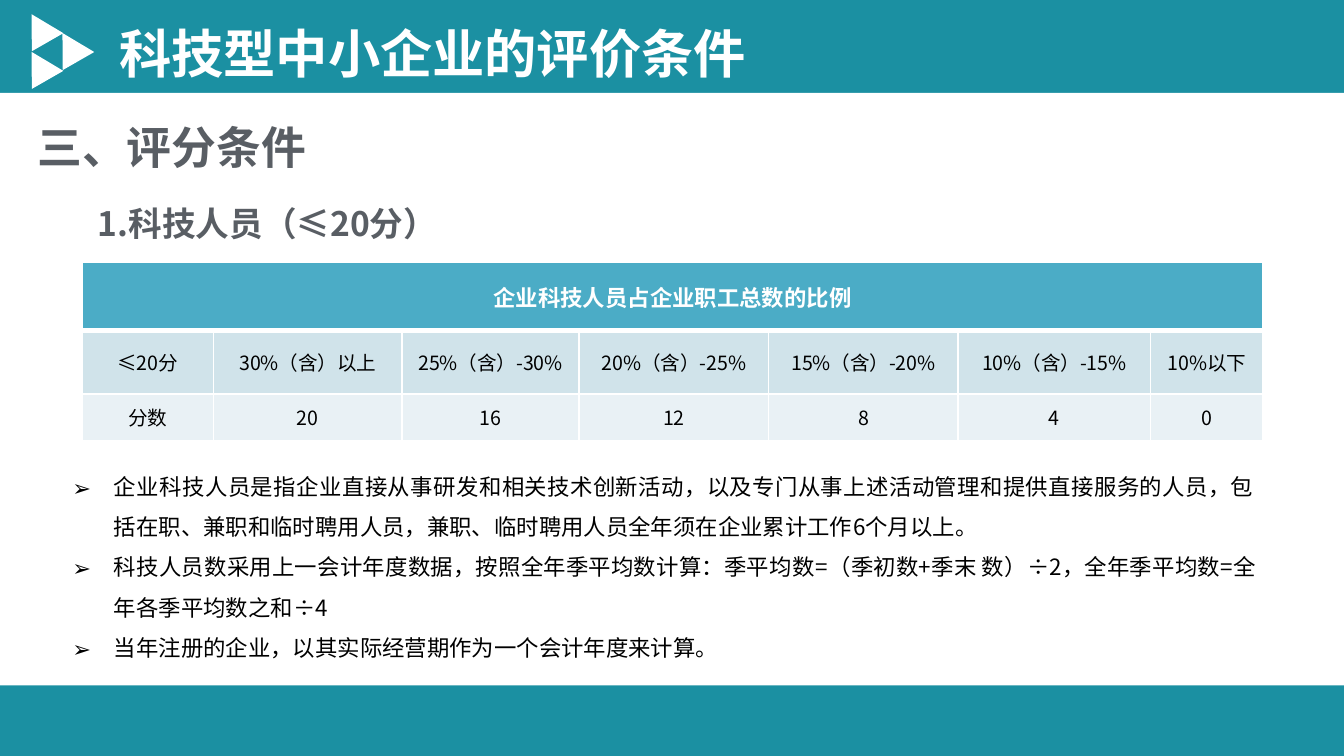
from lxml import etree
from pptx import Presentation
from pptx.dml.color import RGBColor
from pptx.enum import shapes, text
from pptx.oxml import ns
from pptx.util import Inches, Pt

THEME = {
    "font": "Noto Sans CJK SC",
    "teal": "1B90A2", "white": "FFFFFF", "gray": "595E64", "black": "000000",
    "head": "4BACC6", "band": "D0E3EA", "pale": "E9F1F5",
    "title": 28, "part": 24, "topic": 18, "body": 12, "cell": 10.5,
}

LABELS = [
    ("科技型中小企业的评价条件", (0.79, 0.11, 4.91, 0.57), "title", "white", False),
    ("三、评分条件", (0.18, 0.84, 2.22, 0.5), "part", "gray", False),
    ("1.科技人员（≤20分）", (0.63, 1.46, 8.62, 0.4), "topic", "gray", True),
]
HEAD = "企业科技人员占企业职工总数的比例"
SCORES = [
    ("≤20分", "分数", 0.98),
    ("30%（含）以上", "20", 1.4),
    ("25%（含）-30%", "16", 1.32),
    ("20%（含）-25%", "12", 1.41),
    ("15%（含）-20%", "8", 1.41),
    ("10%（含）-15%", "4", 1.43),
    ("10%以下", "0", 0.84),
]
ROWS = [0.51, 0.47, 0.35]
NOTES = [
    "企业科技人员是指企业直接从事研发和相关技术创新活动，以及专门从事上述活动管理和提供直接服务的人员，包括在职、兼职和临时聘用人员，兼职、临时聘用人员全年须在企业累计工作6个月以上。",
    "科技人员数采用上一会计年度数据，按照全年季平均数计算：季平均数=（季初数+季末 数）÷2，全年季平均数=全年各季平均数之和÷4",
    "当年注册的企业，以其实际经营期作为一个会计年度来计算。",
]
ARROWS = [(0.16, 0.09), (0.16, 0.37), (0.39, 0.23)]


def color(name):
    return RGBColor.from_string(THEME[name])


def style(para, words, size, tone, bold=False):
    para.text = words
    font = para.font
    font.name, font.size, font.bold = THEME["font"], Pt(THEME[size]), bold
    font.color.rgb = color(tone)
    props = para._p.get_or_add_pPr().find(ns.qn("a:defRPr"))
    etree.SubElement(props, ns.qn("a:ea"), typeface=THEME["font"])
    return props


def add_shape(slide, kind, box, angle=0):
    shape = slide.shapes.add_shape(kind, *map(Inches, box))
    shape.shadow.inherit = False
    shape.fill.solid()
    shape.fill.fore_color.rgb = color("white")
    shape.line.fill.background()
    shape.rotation = angle


def add_text(slide, box, wrap):
    frame = slide.shapes.add_textbox(*map(Inches, box)).text_frame
    frame.word_wrap = wrap
    frame.auto_size = text.MSO_AUTO_SIZE.SHAPE_TO_FIT_TEXT
    return frame


def add_edge(cell, side, width):
    line = etree.SubElement(cell._tc.get_or_add_tcPr(), ns.qn("a:ln" + side), w=str(Pt(width)))
    fill = etree.SubElement(line, ns.qn("a:solidFill"))
    etree.SubElement(fill, ns.qn("a:srgbClr"), val=THEME["white"])


def add_scores(slide):
    labels, points, widths = zip(*SCORES)
    grid = [(HEAD,) + ("",) * (len(SCORES) - 1), labels, points]
    table = slide.shapes.add_table(
        len(ROWS), len(SCORES), Inches(0.61), Inches(1.95),
        Inches(sum(widths)), Inches(sum(ROWS))).table
    table.first_row = table.horz_banding = False
    for col, width in zip(table.columns, widths):
        col.width = Inches(width)
    for r, (row, high) in enumerate(zip(grid, ROWS)):
        table.rows[r].height = Inches(high)
        for c, words in enumerate(row):
            cell = table.cell(r, c)
            for side in "LRTB":
                thick = (r, side) in [(0, "B"), (1, "T")]
                add_edge(cell, side, 3 if thick else 1)
            cell.fill.solid()
            cell.fill.fore_color.rgb = color(("head", "band", "pale")[r])
            cell.vertical_anchor = text.MSO_ANCHOR.MIDDLE
            cell.margin_top = cell.margin_bottom = Inches(0.04)
            para = cell.text_frame.paragraphs[0]
            para.alignment = text.PP_ALIGN.CENTER
            if r == 0:
                style(para, words, "body", "white", True)
            else:
                style(para, words, "cell", "black")
    table.cell(0, 0).merge(table.cell(0, len(SCORES) - 1))


def add_notes(slide):
    frame = add_text(slide, (0.44, 3.37, 9, 1.62), True)
    for i, note in enumerate(NOTES):
        para = frame.add_paragraph() if i else frame.paragraphs[0]
        para.alignment = text.PP_ALIGN.JUSTIFY
        para.line_spacing = 1.5
        props = style(para, note, "body", "black")
        props.addprevious(etree.Element(ns.qn("a:buFont"), typeface=THEME["font"]))
        props.addprevious(etree.Element(ns.qn("a:buChar"), char="➢"))
        parent = para._p.get_or_add_pPr()
        parent.set("marL", str(Inches(0.31)))
        parent.set("indent", str(-Inches(0.31)))


def main():
    deck = Presentation()
    deck.slide_width = Inches(10)
    deck.slide_height = deck.slide_width * 9 // 16
    slide = deck.slides.add_slide(deck.slide_layouts[6])
    slide.background.fill.solid()
    slide.background.fill.fore_color.rgb = color("teal")
    add_shape(slide, shapes.MSO_SHAPE.RECTANGLE, (0, 0.69, 10, 4.41))
    for left, top in ARROWS:
        add_shape(slide, shapes.MSO_SHAPE.ISOSCELES_TRIANGLE, (left, top, 0.27, 0.24), 330.2)
    for words, box, size, tone, wrap in LABELS:
        style(add_text(slide, box, wrap).paragraphs[0], words, size, tone, True)
    add_scores(slide)
    add_notes(slide)
    deck.save("out.pptx")


if __name__ == "__main__":
    main()
